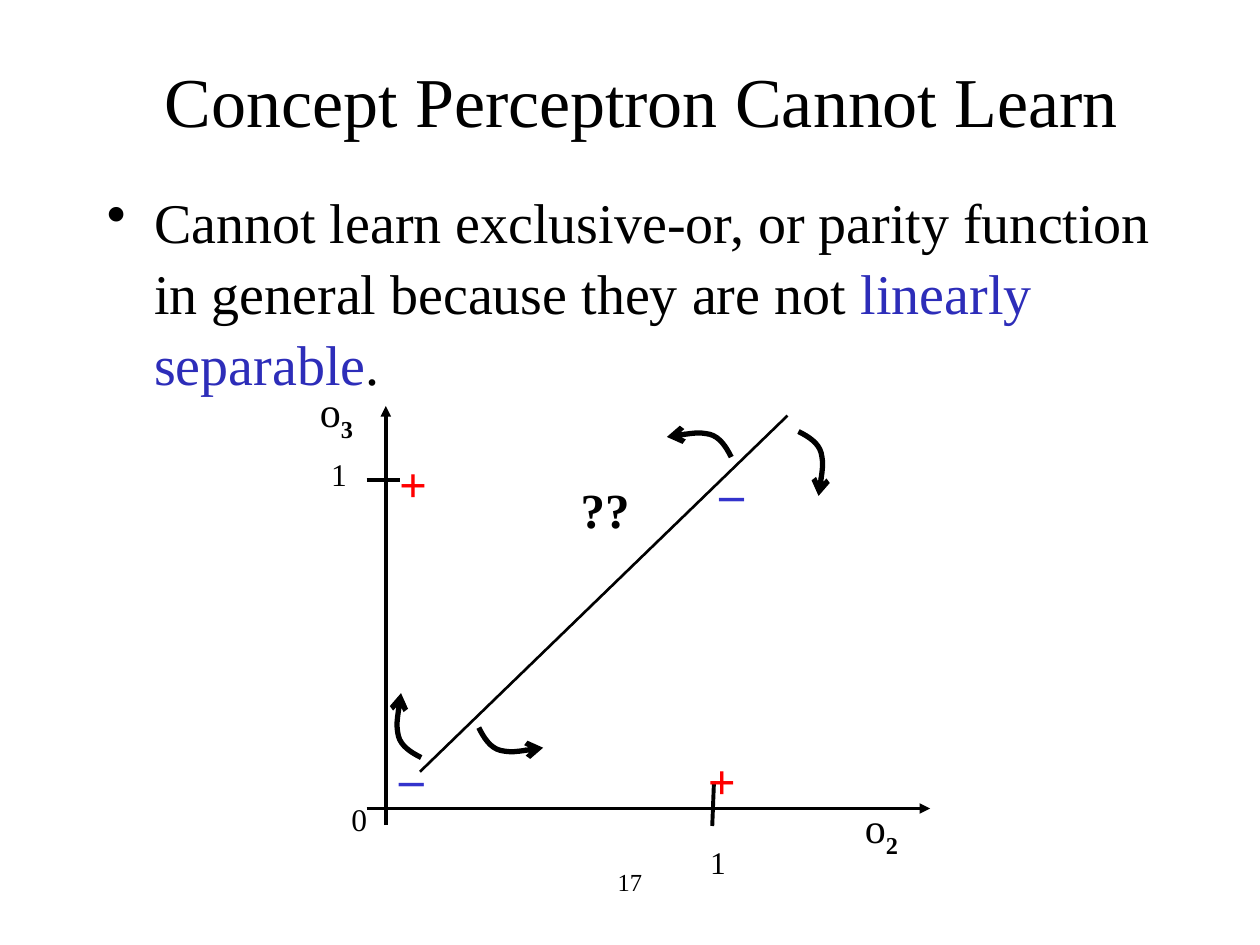
import dataclasses

import lxml.etree
import pptx
import pptx.dml.color
import pptx.enum.text
import pptx.oxml.ns
import pptx.util

Pt = pptx.util.Pt
qn = pptx.oxml.ns.qn
ALIGN = pptx.enum.text.PP_ALIGN
ANCHOR = pptx.enum.text.MSO_ANCHOR


@dataclasses.dataclass(frozen=True)
class Theme:
    font: str = "Times New Roman"
    ink: str = "000000"
    accent: str = "2D2DB9"
    positive: str = "FF0000"
    negative: str = "3333CC"
    title: int = 40
    body: int = 32
    sign: int = 28
    axis: int = 24
    tick: int = 18
    footer: int = 14


class SlideBuilder:
    ARC = [(18.4, 7.2), (15.5, 1.4), (11.9, -4.3), (6.1, -5.8),
           (-0.4, -7.2), (-9, -5.8), (-18.4, -4.3)]

    def __init__(self, slide, theme):
        self.slide = slide
        self.theme = theme

    def style(self, run, size, color=None, bold=False):
        run.font.name = self.theme.font
        run.font.size = Pt(size)
        run.font.bold = bold
        run.font.color.rgb = pptx.dml.color.RGBColor.from_string(color or self.theme.ink)

    def title(self, text, left, top, width, height):
        heading = self.slide.shapes.title
        heading.left, heading.top = Pt(left), Pt(top)
        heading.width, heading.height = Pt(width), Pt(height)
        frame = heading.text_frame
        frame.text = text
        frame.vertical_anchor = ANCHOR.MIDDLE
        frame.paragraphs[0].alignment = ALIGN.CENTER
        self.style(frame.paragraphs[0].runs[0], self.theme.title)

    def text_box(self, left, top, width, height, wrap=True):
        box = self.slide.shapes.add_textbox(Pt(left), Pt(top), Pt(width), Pt(height))
        box.text_frame.word_wrap = wrap
        return box.text_frame

    def bullet(self, parts, left, top, width, height):
        paragraph = self.text_box(left, top, width, height).paragraphs[0]
        paragraph.line_spacing = 1.05
        paragraph.space_before = Pt(6.4)
        properties = paragraph._p.get_or_add_pPr()
        properties.set("marL", str(Pt(27)))
        properties.set("indent", str(-Pt(27)))
        lxml.etree.SubElement(properties, qn("a:buChar"), char="•")
        for text, color in parts:
            run = paragraph.add_run()
            run.text = text
            self.style(run, self.theme.body, color)

    def label(self, text, left, top, width, height, size,
              color=None, bold=False, subscript="", wrap=False):
        frame = self.text_box(left, top, width, height, wrap)
        frame.text = text
        if not wrap:
            frame.auto_size = pptx.enum.text.MSO_AUTO_SIZE.SHAPE_TO_FIT_TEXT
        paragraph = frame.paragraphs[0]
        paragraph.alignment = ALIGN.CENTER
        self.style(paragraph.runs[0], size, color, bold)
        if subscript:
            index = paragraph.add_run()
            index.text = subscript
            self.style(index, size, color, bold=True)
            index._r.get_or_add_rPr().set("baseline", "-25000")

    def stroke(self, outline, weight, head=None):
        outline.line.width = Pt(weight)
        outline.line.color.rgb = pptx.dml.color.RGBColor.from_string(self.theme.ink)
        if head:
            lxml.etree.SubElement(outline.line._get_or_add_ln(), qn("a:tailEnd"), type=head)

    def line(self, x1, y1, x2, y2, weight, head=None):
        connector = self.slide.shapes.add_connector(
            pptx.enum.shapes.MSO_CONNECTOR.STRAIGHT, Pt(x1), Pt(y1), Pt(x2), Pt(y2))
        self.stroke(connector, weight, head)
        lxml.etree.SubElement(connector._element.spPr, qn("a:effectLst"))

    def turn_arrow(self, center_x, center_y, sign, swap):
        offsets = [(y, x) if swap else (x, y) for x, y in self.ARC]
        points = [(Pt(center_x + sign * x), Pt(center_y + sign * y)) for x, y in offsets]
        builder = self.slide.shapes.build_freeform(*points[0])
        builder.add_line_segments(points[1:], close=False)
        arrow = builder.convert_to_shape()
        arrow.shadow.inherit = False
        arrow.fill.background()
        self.stroke(arrow, 3, "arrow")
        segments = list(arrow._element.iter(qn("a:lnTo")))
        for first in range(0, len(segments), 3):
            group = segments[first:first + 3]
            curve = lxml.etree.SubElement(group[0].getparent(), qn("a:cubicBezTo"))
            for segment in group:
                curve.append(segment[0])
                segment.getparent().remove(segment)


def main():
    theme = Theme()
    deck = pptx.Presentation()
    deck.slide_width, deck.slide_height = Pt(720), Pt(540)
    slide = SlideBuilder(deck.slides.add_slide(deck.slide_layouts[5]), theme)

    slide.title("Concept Perceptron Cannot Learn", 60.5, 24, 612, 66)
    slide.bullet([
        ("Cannot learn exclusive-or, or parity function in general because they are not ", theme.ink),
        ("linearly separable", theme.accent),
        (".", theme.ink),
    ], 54, 102, 612, 124)
    slide.label("17", 246, 492, 228, 36, theme.footer, wrap=True)

    slide.line(220.5, 471.5, 220.5, 232, 2, "triangle")
    slide.line(209.5, 462, 531.5, 462, 2, "triangle")
    slide.line(240, 441, 450, 237.5, 1.5)
    slide.line(209.5, 274.5, 228.5, 274.5, 2.25)
    slide.line(408, 446.5, 407, 472, 2.25)

    for subscript, left, top in [("3", 175, 217), ("2", 486.5, 454.5)]:
        slide.label("o", left, top, 34.5, 36, theme.axis, subscript=subscript)
    for value, left, top in [("1", 181.5, 256.5), ("0", 193, 453.5), ("1", 398, 478)]:
        slide.label(value, left, top, 24.5, 31, theme.tick)

    for center_x, center_y, sign, swap in [
        (399.5, 254, 1, False), (463.5, 265, -1, True),
        (233.5, 414.5, 1, True), (292, 423, -1, False),
    ]:
        slide.turn_arrow(center_x, center_y, sign, swap)

    slide.label("??", 324.5, 270.5, 42.5, 41, theme.sign, bold=True)
    for left, top in [(221, 255.5), (397.5, 425.5)]:
        slide.label("+", left, top, 30, 41, theme.sign, theme.positive, bold=True)
    for left, top in [(404, 260.5), (221, 423.5)]:
        slide.label("–", left, top, 28, 41, theme.sign, theme.negative, bold=True)

    deck.save("out.pptx")


if __name__ == "__main__":
    main()
